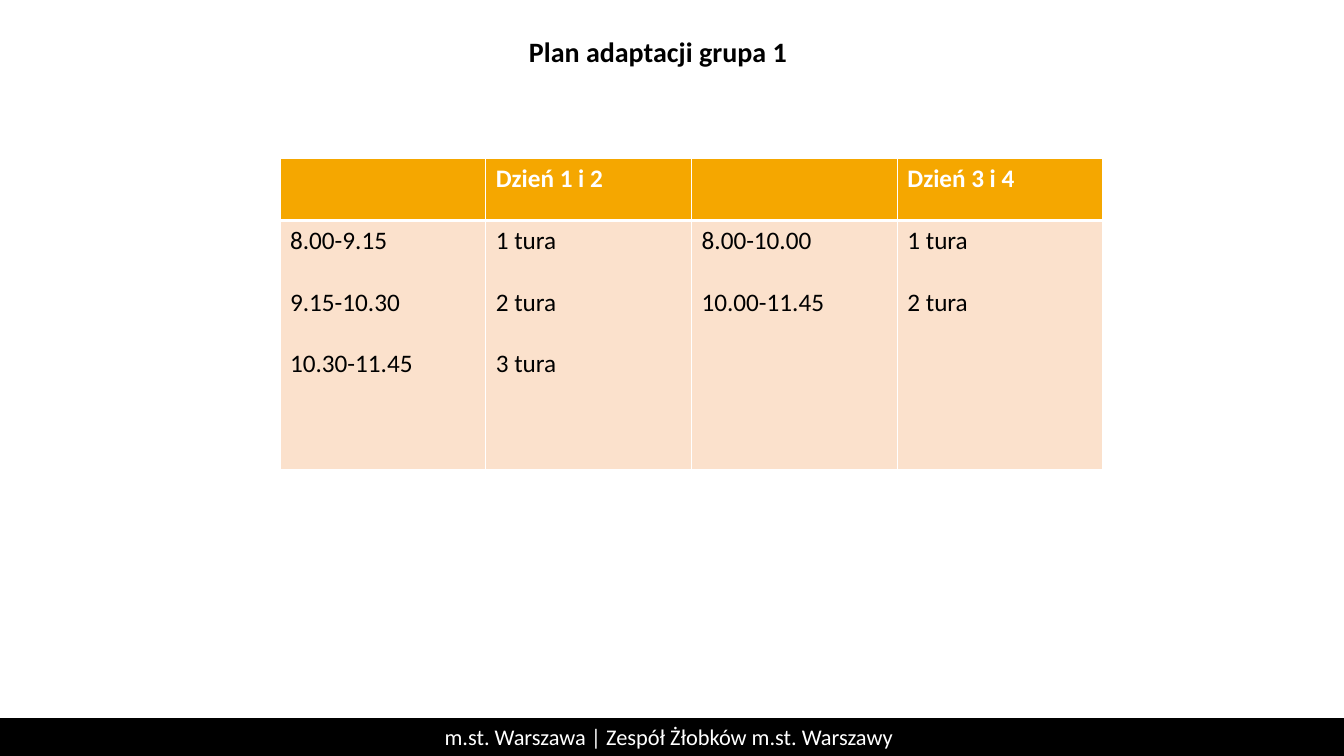
from lxml import etree
from pptx import Presentation
from pptx.dml.color import RGBColor
from pptx.enum import shapes, text
from pptx.oxml import ns
from pptx.util import Pt

WIDTH, HEIGHT = 960, 540
BLACK, WHITE, ORANGE, PEACH = "000000", "FFFFFF", "F5A700", "FBE1CC"
HEADERS = ["", "Dzień 1 i 2", "", "Dzień 3 i 4"]
SCHEDULE = [
    ["8.00-9.15", "9.15-10.30", "10.30-11.45"],
    ["1 tura", "2 tura", "3 tura"],
    ["8.00-10.00", "10.00-11.45"],
    ["1 tura", "2 tura"],
]


def color(hex_string):
    return RGBColor.from_string(hex_string)


def format_text(tf, size, hex_string, bold=False):
    for p in tf.paragraphs:
        for font in [p.font] + [r.font for r in p.runs]:
            font.name = "Calibri"
            font.size = Pt(size)
            font.bold = bold
            font.color.rgb = color(hex_string)


def set_borders(cell, widths):
    tc_pr = cell._tc.get_or_add_tcPr()
    # Borders must precede the cell fill in the XML
    for i, (side, width) in enumerate(widths.items()):
        ln = etree.Element(ns.qn("a:ln" + side), w=str(Pt(width)))
        fill = etree.SubElement(ln, ns.qn("a:solidFill"))
        etree.SubElement(fill, ns.qn("a:srgbClr"), val=WHITE)
        tc_pr.insert(i, ln)


def add_title(slide, x, y, w, h):
    tf = slide.shapes.add_textbox(Pt(x), Pt(y), Pt(w), Pt(h)).text_frame
    tf.word_wrap = True
    tf.text = "Plan adaptacji grupa 1"
    tf.paragraphs[0].alignment = text.PP_ALIGN.CENTER
    format_text(tf, 20, BLACK, True)


def add_schedule(slide, x, y, w, h):
    header_h = h / 5
    frame = slide.shapes.add_table(2, len(HEADERS), Pt(x), Pt(y), Pt(w), Pt(h))
    table = frame.table
    table.rows[0].height = Pt(header_h)
    table.rows[1].height = Pt(h - header_h)
    for i, (header, entries) in enumerate(zip(HEADERS, SCHEDULE)):
        table.columns[i].width = Pt(w / len(HEADERS))
        # Header cell
        cell = table.cell(0, i)
        cell.text = header
        format_text(cell.text_frame, 18, WHITE, True)
        cell.fill.solid()
        cell.fill.fore_color.rgb = color(ORANGE)
        set_borders(cell, {"L": 1, "R": 1, "T": 1, "B": 3})
        # Body cell, one blank line's height between entries
        cell = table.cell(1, i)
        cell.text = "\n".join(entries)
        format_text(cell.text_frame, 18, BLACK)
        for p in cell.text_frame.paragraphs[:-1]:
            p.space_after = Pt(22)
        cell.fill.solid()
        cell.fill.fore_color.rgb = color(PEACH)
        set_borders(cell, {"L": 1, "R": 1, "T": 3, "B": 1})


def add_footer(slide, x, y, w, h):
    # Black bar
    sp = slide.shapes.add_shape(shapes.MSO_SHAPE.RECTANGLE, Pt(x), Pt(y), Pt(w), Pt(h))
    sp.shadow.inherit = False
    sp.fill.solid()
    sp.fill.fore_color.rgb = color(BLACK)
    sp.line.color.rgb = color(BLACK)
    sp.line.width = Pt(1)
    # Organisation name
    name_w = 339
    name_x = x + (w - name_w) / 2
    tf = slide.shapes.add_textbox(Pt(name_x), Pt(y), Pt(name_w), Pt(h)).text_frame
    tf.word_wrap = False
    tf.text = "m.st. Warszawa | Zespół Żłobków m.st. Warszawy"
    format_text(tf, 16, WHITE)


def main():
    prs = Presentation()
    prs.slide_width, prs.slide_height = Pt(WIDTH), Pt(HEIGHT)
    slide = prs.slides.add_slide(prs.slide_layouts[6])
    add_footer(slide, 0, HEIGHT - 27, WIDTH, 27)
    add_title(slide, 144, 21, 652, 32)
    add_schedule(slide, 200, 113, 588, 222.5)
    prs.save("out.pptx")


if __name__ == "__main__":
    main()
